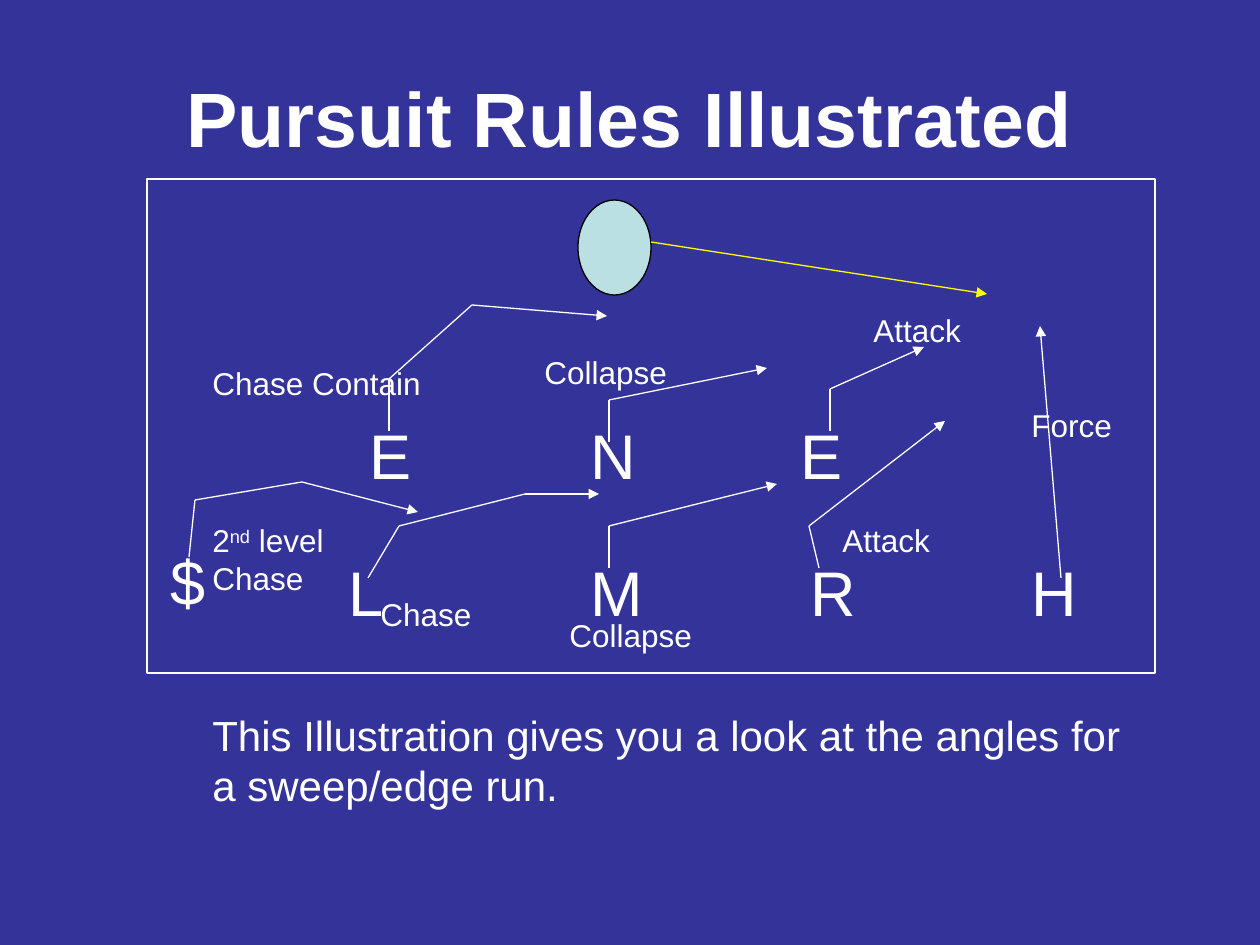
from dataclasses import dataclass
from itertools import pairwise

from lxml.etree import SubElement
from pptx import Presentation
from pptx.dml.color import RGBColor
from pptx.enum.shapes import MSO_CONNECTOR, MSO_SHAPE
from pptx.enum.text import MSO_ANCHOR, MSO_AUTO_SIZE, PP_ALIGN
from pptx.oxml.ns import qn
from pptx.util import Emu, Pt


@dataclass(frozen=True)
class Theme:
    back: RGBColor = RGBColor(0x33, 0x33, 0x99)
    ink: RGBColor = RGBColor(0xFF, 0xFF, 0xFF)
    ball: RGBColor = RGBColor(0xBB, 0xE0, 0xE3)
    ball_line: RGBColor = RGBColor(0, 0, 0)
    run: RGBColor = RGBColor(0xFF, 0xFF, 0x00)
    font: str = "Arial"
    title: int = 44
    player: int = 36
    caption: int = 24
    label: int = 18
    line: float = 0.75


THEME = Theme()
PLAYER_W, PLAYER_H, LABEL_H = 73, 88, 50

PLAYERS = [
    ("E", 641, 231), ("E", 210, 231), ("N", 431, 231),
    ("R", 651, 368), ("L", 189, 368), ("M", 431, 368),
    ("H", 872, 368), ("$", 11, 357),
]
ROUTES = [
    [(914, 399), (893, 147)],
    [(683, 252), (683, 210), (777, 168)],
    [(672, 389), (662, 347), (798, 242)],
    [(462, 263), (462, 221), (620, 189)],
    [(462, 389), (462, 347), (630, 305)],
    [(242, 252), (242, 200), (325, 126), (460, 137)],
    [(221, 399), (252, 347), (378, 315), (452, 315)],
    [(42, 378), (48, 321), (155, 303), (271, 333)],
]
LABELS = [
    (["Attack"], 714, 126, 126, LABEL_H),
    (["Attack"], 683, 336, 126, LABEL_H),
    (["Collapse"], 385, 168, 158, LABEL_H),
    (["Collapse"], 410, 431, 168, LABEL_H),
    (["Chase Contain"], 53, 179, 242, LABEL_H),
    (["2", "nd", " level Chase"], 53, 336, 189, 88),
    (["Chase"], 221, 410, 136, LABEL_H),
    (["Force"], 872, 221, 126, LABEL_H),
]


def px(n):
    return Emu(round(n * 914400 / 126))


def add_text(s, runs, box, size):
    sp = s.shapes.add_textbox(*map(px, box))
    tf = sp.text_frame
    tf.word_wrap = True
    p = tf.paragraphs[0]
    p.font.name = THEME.font
    p.font.size = Pt(size)
    p.font.color.rgb = THEME.ink
    for text in runs:
        r = p.add_run()
        r.text = text
        if text == "nd":
            r._r.get_or_add_rPr().set("baseline", "30000")
    return tf


def add_body(s, runs, box, size):
    tf = add_text(s, runs, box, size)
    tf.auto_size = MSO_AUTO_SIZE.SHAPE_TO_FIT_TEXT
    p = tf.paragraphs[0]
    p.space_before = Pt(0)
    before = p._p.pPr.find(qn("a:spcBef"))
    before.remove(before[0])
    SubElement(before, qn("a:spcPct")).set("val", "50000")


def add_shape(s, kind, box, line):
    sp = s.shapes.add_shape(kind, *map(px, box))
    sp.shadow.inherit = False
    sp.fill.background()
    sp.line.color.rgb = line
    sp.line.width = Pt(THEME.line)
    return sp


def add_route(s, points, color):
    for start, end in pairwise(points):
        c = s.shapes.add_connector(MSO_CONNECTOR.STRAIGHT, *map(px, start + end))
        c.line.color.rgb = color
        c.line.width = Pt(THEME.line)
        if end == points[-1]:
            SubElement(c.line._get_or_add_ln(), qn("a:tailEnd")).set("type", "triangle")
        SubElement(c._element.spPr, qn("a:effectLst"))


def add_title(s, box):
    tf = add_text(s, ["Pursuit Rules Illustrated"], box, THEME.title)
    tf.vertical_anchor = MSO_ANCHOR.MIDDLE
    p = tf.paragraphs[0]
    p.alignment = PP_ALIGN.CENTER
    p.font.bold = True


def add_field(s, box):
    left, top = box[:2]

    def at(x, y):
        return left + x, top + y

    add_shape(s, MSO_SHAPE.RECTANGLE, box, THEME.ink)
    for name, x, y in PLAYERS:
        add_body(s, [name], (*at(x, y), PLAYER_W, PLAYER_H), THEME.player)
    ball = add_shape(s, MSO_SHAPE.OVAL, (*at(431, 21), 73, 95), THEME.ball_line)
    ball.fill.solid()
    ball.fill.fore_color.rgb = THEME.ball
    add_route(s, [at(504, 63), at(840, 115)], THEME.run)
    for route in ROUTES:
        add_route(s, [at(*point) for point in route], THEME.ink)
    for runs, x, y, w, h in LABELS:
        add_body(s, runs, (*at(x, y), w, h), THEME.label)


def add_caption(s, box):
    text = "This Illustration gives you a look at the angles for a sweep/edge run."
    add_body(s, [text], box, THEME.caption)


def main():
    prs = Presentation()
    prs.slide_width, prs.slide_height = px(1260), px(945)
    s = prs.slides.add_slide(prs.slide_layouts[6])
    s.background.fill.solid()
    s.background.fill.fore_color.rgb = THEME.back
    add_title(s, (63, 38, 1134, 157))
    add_field(s, (147, 179, 1008, 494))
    add_caption(s, (200, 703, 945, 113))
    prs.save("out.pptx")


if __name__ == "__main__":
    main()
